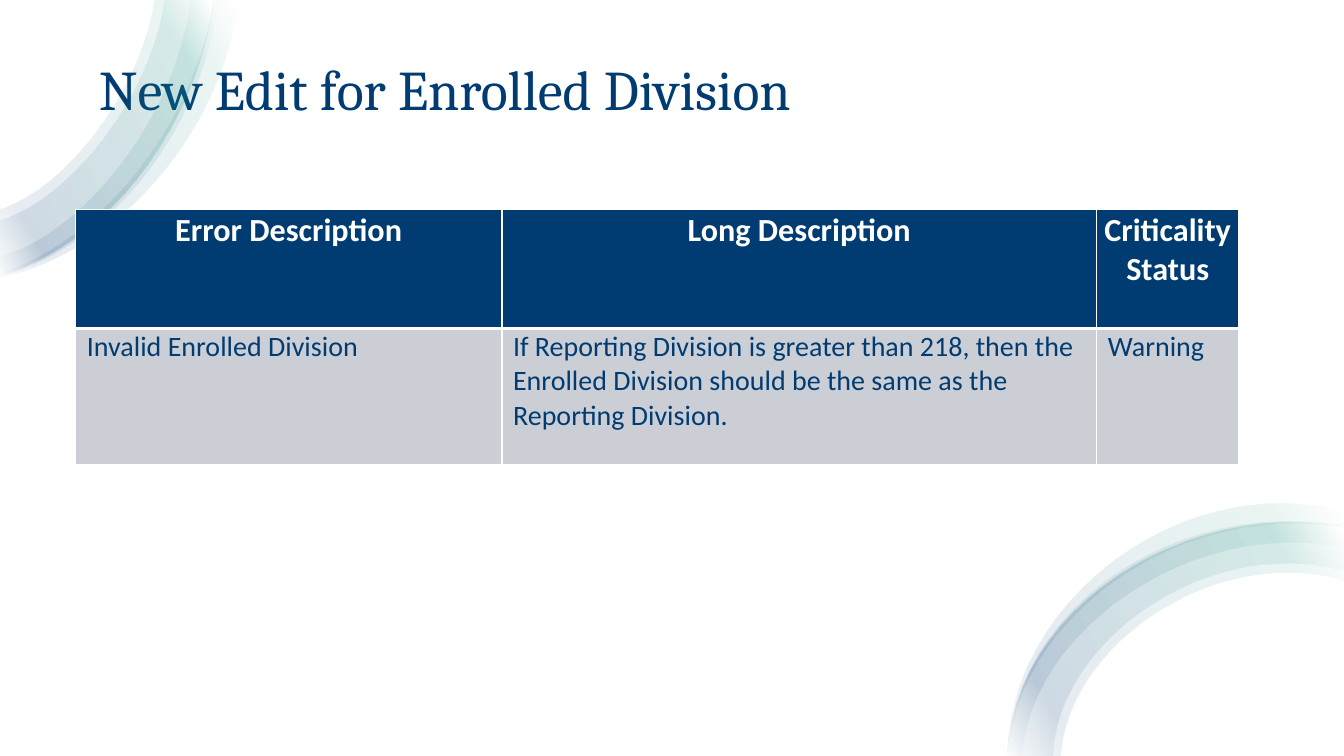
from lxml import etree
from pptx import Presentation
from pptx import util as u
from pptx.dml.color import RGBColor
from pptx.enum import shapes, text
from pptx.oxml import ns

NAVY = RGBColor(0x00, 0x3C, 0x71)
TEAL = RGBColor(0x27, 0x99, 0x89)
GREY = RGBColor(0xCC, 0xCE, 0xD5)
WHITE = RGBColor(0xFF, 0xFF, 0xFF)

GRID_CM = 2.54
CURVE_STEPS = 24
RIBBON_STOPS = [(2, WHITE), (16, TEAL), (85, NAVY), (100, WHITE)]
RIBBON_OPACITY = 10

TOP_EDGE = [(0, 2.73), (1.1, 2.4), (1.95, 1.25), (2.12, 0)]
TOP_RIBBONS = [
    ([(0, 2.75), (1.15, 2.5), (2.2, 1.35), (2.37, 0)],
     [(0, 2.7), (1, 2.4), (1.95, 1.2), (2.12, 0)]),
    (TOP_EDGE, [(0, 2.07), (0.65, 1.87), (1.4, 0.9), (1.53, 0)]),
    ([(0, 2.74), (1.05, 2.45), (2, 1.35), (2.16, 0)],
     [(0, 2.54), (0.85, 2.3), (1.75, 1.15), (1.89, 0)]),
    (TOP_EDGE, [(0, 2.18), (0.7, 1.97), (1.5, 0.95), (1.63, 0)]),
]
BOTTOM_EDGE = [(0, 2.5), (0.05, 1.05), (1.75, -0.05), (3.33, 0.23)]
BOTTOM_RIBBONS = [
    (BOTTOM_EDGE, [(0.53, 2.5), (0.6, 1.4), (2.05, 0.4), (3.33, 0.76)]),
    (BOTTOM_EDGE, [(0.45, 2.5), (0.5, 1.35), (2, 0.3), (3.33, 0.67)]),
    ([(0, 2.5), (0.05, 1.05), (1.65, -0.07), (3.33, 0.22)],
     [(0.15, 2.5), (0.2, 1.3), (1.8, 0.12), (3.33, 0.44)]),
    ([(0, 2.5), (0, 1), (1.7, -0.35), (3.33, 0.08)],
     [(0.02, 2.5), (0.05, 1.2), (1.65, -0.05), (3.33, 0.24)]),
]

TABLE_ROWS = [
    ["Error Description", "Long Description", "Criticality Status"],
    ["Invalid Enrolled Division",
     "If Reporting Division is greater than 218, then the Enrolled Division "
     "should be the same as the Reporting Division.",
     "Warning"],
]
COLUMN_WIDTHS = [10.74, 14.99, 3.58]
ROW_HEIGHTS = [3, 3.42]


def write_text(frame, words, font="Calibri", size=20, color=NAVY, bold=False,
               align=text.PP_ALIGN.LEFT, spacing=None):
    para = frame.paragraphs[0]
    para.alignment = align
    para.line_spacing = spacing
    span = para.add_run()
    span.text = words
    span.font.name = font
    span.font.size = u.Pt(size)
    span.font.bold = bold
    span.font.color.rgb = color


def add_solid(parent, color, opacity=100):
    node = etree.SubElement(parent, ns.qn("a:srgbClr"), val=str(color))
    if opacity < 100:
        etree.SubElement(node, ns.qn("a:alpha"), val=str(opacity * 1000))


def set_gradient(shape, angle):
    shape.fill.background()
    blank = shape._element.spPr.find(ns.qn("a:noFill"))
    gradient = etree.Element(ns.qn("a:gradFill"), rotWithShape="1")
    stops = etree.SubElement(gradient, ns.qn("a:gsLst"))
    for position, color in RIBBON_STOPS:
        stop = etree.SubElement(stops, ns.qn("a:gs"), pos=str(position * 1000))
        add_solid(stop, color, RIBBON_OPACITY)
    etree.SubElement(gradient, ns.qn("a:lin"), ang=str(angle * 60000), scaled="0")
    blank.getparent().replace(blank, gradient)


def set_borders(cell, bottom_width):
    properties = cell._tc.get_or_add_tcPr()
    for index, side in enumerate(["lnL", "lnR", "lnT", "lnB"]):
        width = bottom_width if side == "lnB" else 1
        line = etree.Element(ns.qn(f"a:{side}"), w=str(u.Pt(width)))
        add_solid(etree.SubElement(line, ns.qn("a:solidFill")), WHITE)
        properties.insert(index, line)


def curve_points(controls, left, top):
    points = []
    for step in range(CURVE_STEPS + 1):
        t = step / CURVE_STEPS
        weights = [(1 - t) ** 3, 3 * t * (1 - t) ** 2, 3 * t * t * (1 - t), t ** 3]
        x, y = (sum(w * c[axis] for w, c in zip(weights, controls)) for axis in (0, 1))
        points.append((u.Cm(left + x * GRID_CM), u.Cm(top + y * GRID_CM)))
    return points


def add_ribbons(page, ribbons, left, top, angle):
    for outer, inner in ribbons:
        points = curve_points(outer, left, top) + curve_points(inner, left, top)[::-1]
        builder = page.shapes.build_freeform(*points[0])
        builder.add_line_segments(points[1:], close=True)
        ribbon = builder.convert_to_shape()
        ribbon.shadow.inherit = False
        ribbon.line.fill.background()
        set_gradient(ribbon, angle)


def add_backdrop(page, width, height):
    backdrop = page.shapes.add_shape(shapes.MSO_SHAPE.RECTANGLE, 0, 0, width, height)
    backdrop.shadow.inherit = False
    backdrop.fill.solid()
    backdrop.fill.fore_color.rgb = WHITE
    backdrop.line.fill.background()
    page.shapes.title._element.addprevious(backdrop._element)


def add_title(page, left, top, width, height):
    title = page.shapes.title
    title.left, title.top = u.Cm(left), u.Cm(top)
    title.width, title.height = u.Cm(width), u.Cm(height)
    title.text_frame.vertical_anchor = text.MSO_ANCHOR.MIDDLE
    write_text(title.text_frame, "New Edit for Enrolled Division",
               font="Cambria", size=40, spacing=0.9)


def add_edit_table(page, left, top):
    table = page.shapes.add_table(
        len(ROW_HEIGHTS), len(COLUMN_WIDTHS), u.Cm(left), u.Cm(top),
        u.Cm(sum(COLUMN_WIDTHS)), u.Cm(sum(ROW_HEIGHTS))).table
    for column, width in zip(table.columns, COLUMN_WIDTHS):
        column.width = u.Cm(width)
    for row, height, entries in zip(table.rows, ROW_HEIGHTS, TABLE_ROWS):
        row.height = u.Cm(height)
        header = entries is TABLE_ROWS[0]
        for cell, words in zip(row.cells, entries):
            cell.margin_left = u.Cm(0.03 if header else 0.28)
            cell.margin_right = cell.margin_top = u.Cm(0.03)
            cell.margin_bottom = 0
            cell.fill.solid()
            cell.fill.fore_color.rgb = NAVY if header else GREY
            set_borders(cell, 3 if header else 1)
            if header:
                write_text(cell.text_frame, words, size=23, color=WHITE,
                           bold=True, align=text.PP_ALIGN.CENTER)
            else:
                write_text(cell.text_frame, words)


def main():
    deck = Presentation()
    deck.slide_width, deck.slide_height = u.Cm(33.87), u.Cm(19.05)
    page = deck.slides.add_slide(deck.slide_layouts[5])
    add_backdrop(page, deck.slide_width, deck.slide_height)
    add_title(page, 2.24, 1.24, 29.57, 2.16)
    add_ribbons(page, TOP_RIBBONS, 0, 0, 150)
    add_ribbons(page, BOTTOM_RIBBONS, 25.4, 12.7, 150)
    add_edit_table(page, 1.91, 5.28)
    deck.save("out.pptx")


if __name__ == "__main__":
    main()
